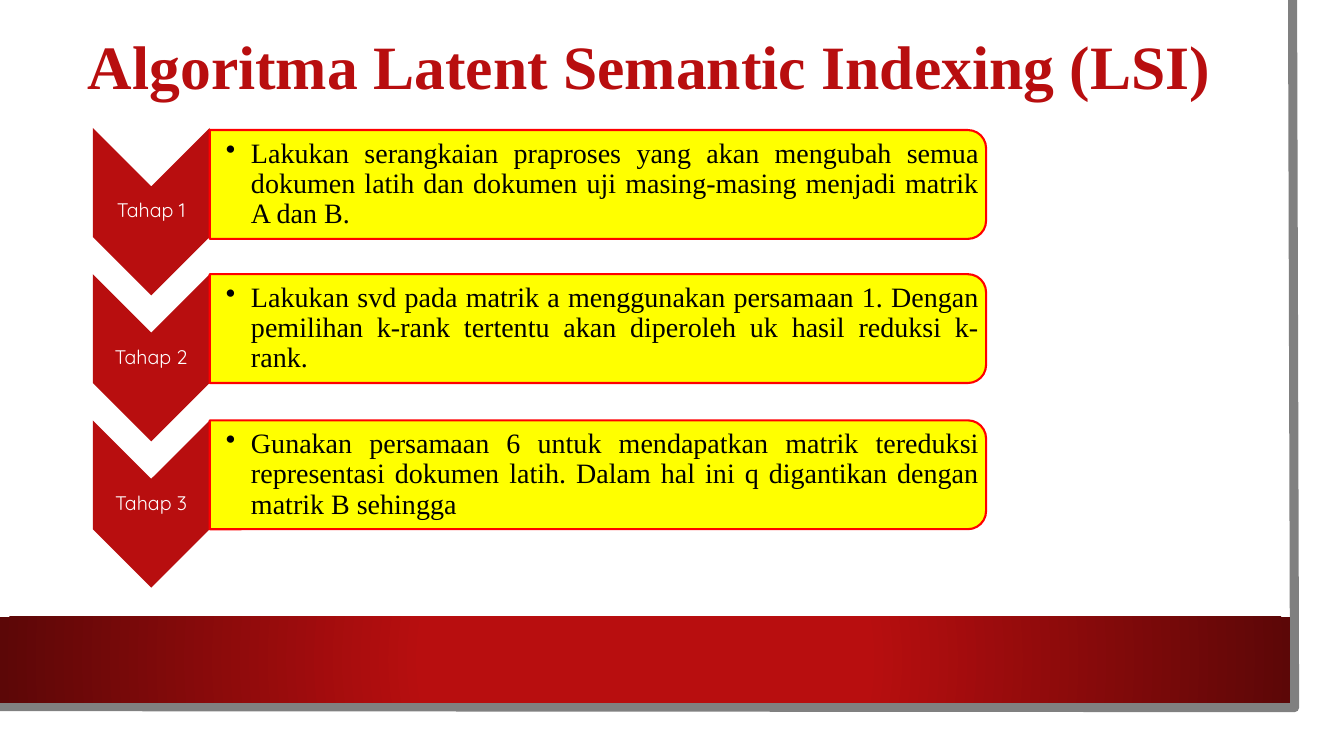
from dataclasses import dataclass

from lxml.etree import SubElement
from pptx import Presentation
from pptx.dml.color import RGBColor
from pptx.enum.shapes import MSO_SHAPE as Preset
from pptx.enum.text import MSO_ANCHOR as Anchor, MSO_AUTO_SIZE as AutoSize, PP_ALIGN as Align
from pptx.oxml.ns import qn
from pptx.util import Pt

PX = 9144  # 100 px to the inch


@dataclass(frozen=True)
class Theme:
    red: str = "B80E0F"
    dark_red: str = "5C0707"
    gray: str = "808080"
    yellow: str = "FFFF00"
    outline: str = "FF0000"
    black: str = "000000"
    white: str = "FFFFFF"
    serif: str = "Times New Roman"
    sans: str = "Quicksand"
    title_size: int = 44
    body_size: int = 20
    label_size: int = 14


def rgb(value):
    return RGBColor.from_string(value)


def apply_format(target, values):
    for name, value in values.items():
        setattr(target, name, value)


class SlideBuilder:
    def __init__(self, slide, theme):
        self.slide = slide
        self.theme = theme

    def fill_text(self, frame, text, font, paragraph_format, inset=(1, 1, 1, 1), bullet=False):
        left, top, right, bottom = (side * PX for side in inset)
        apply_format(frame, dict(
            word_wrap=True, auto_size=AutoSize.NONE, vertical_anchor=Anchor.MIDDLE,
            margin_left=left, margin_top=top, margin_right=right, margin_bottom=bottom))
        frame.text = text
        paragraph = frame.paragraphs[0]
        if bullet:
            properties = paragraph._p.get_or_add_pPr()
            properties.set("marL", str(25 * PX))
            properties.set("indent", str(-25 * PX))
        apply_format(paragraph, paragraph_format)
        if bullet:
            SubElement(properties, qn("a:buChar")).set("char", "•")
        name, size, color, bold = font
        run_font = paragraph.runs[0].font
        apply_format(run_font, dict(name=name, size=Pt(size), bold=bold))
        run_font.color.rgb = rgb(color)

    def title(self, text, box):
        title = self.slide.shapes.title
        apply_format(title, dict(zip(("left", "top", "width", "height"),
                                     (length * PX for length in box))))
        theme = self.theme
        self.fill_text(title.text_frame, text, (theme.serif, theme.title_size, theme.red, True),
                       dict(alignment=Align.CENTER), (0, 5, 0, 5))

    def text(self, box, *content, **options):
        shape = self.slide.shapes.add_textbox(*(length * PX for length in box))
        self.fill_text(shape.text_frame, *content, **options)

    def turned_shape(self, preset, box, fill, line=None):
        """Add a shape turned by 90 degrees that fills the given visible box."""
        left, top, width, height = box
        shift = (width - height) // 2
        shape = self.shape(preset, (left + shift, top - shift, height, width))
        shape.rotation = 90
        shape.fill.solid()
        shape.fill.fore_color.rgb = rgb(fill)
        if line:
            shape.line.color.rgb = rgb(line)
            shape.line.width = Pt(1.5)

    def shape(self, preset, box):
        shape = self.slide.shapes.add_shape(preset, *(length * PX for length in box))
        shape.shadow.inherit = False
        shape.line.fill.background()
        return shape

    def page_edge(self, points):
        builder = self.slide.shapes.build_freeform(*points[0], scale=PX)
        builder.add_line_segments(points[1:], close=False)
        edge = builder.convert_to_shape()
        edge.shadow.inherit = False
        edge.fill.background()
        edge.line.color.rgb = rgb(self.theme.gray)
        edge.line.width = Pt(6.5)

    def footer_band(self, box):
        band = self.shape(Preset.RECTANGLE, box)
        band.fill.gradient()
        stops = ((0.34, self.theme.red), (1, self.theme.dark_red))
        for stop, (position, color) in zip(band.fill.gradient_stops, stops):
            stop.position = position
            stop.color.rgb = rgb(color)
        # Radial gradient from the centre
        gradient = band._element.spPr.find(qn("a:gradFill"))
        gradient.remove(gradient.find(qn("a:lin")))
        radial = SubElement(gradient, qn("a:path"))
        radial.set("path", "circle")
        center = SubElement(radial, qn("a:fillToRect"))
        for side in "ltrb":
            center.set(side, "50000")

    def stage(self, label, description, arrow_top, bar_top):
        theme = self.theme
        self.turned_shape(Preset.CHEVRON, (92, arrow_top, 116, 166), theme.red)
        self.text((92, arrow_top + 58, 116, 50), label,
                  (theme.sans, theme.label_size, theme.white, False),
                  dict(alignment=Align.CENTER, line_spacing=0.9, space_after=Pt(5)))
        self.turned_shape(Preset.ROUND_2_SAME_RECTANGLE, (208, bar_top, 770, 108),
                          theme.yellow, theme.outline)
        self.text((208, bar_top + 5, 764, 98), description,
                  (theme.serif, theme.body_size, theme.black, False),
                  dict(alignment=Align.JUSTIFY, line_spacing=0.9, space_after=Pt(3)),
                  inset=(16, 1, 1, 1), bullet=True)


STAGES = (
    (129, "Lakukan serangkaian praproses yang akan mengubah semua dokumen latih "
          "dan dokumen uji masing-masing menjadi matrik A dan B."),
    (272, "Lakukan svd pada matrik a menggunakan persamaan 1. Dengan pemilihan "
          "k-rank tertentu akan diperoleh uk hasil reduksi k-rank."),
    (417, "Gunakan persamaan 6 untuk mendapatkan matrik tereduksi representasi "
          "dokumen latih. Dalam hal ini q digantikan dengan matrik B sehingga"),
)
FIRST_ARROW, STAGE_PITCH = 127, 145


def main():
    presentation = Presentation()
    presentation.slide_width, presentation.slide_height = 1333 * PX, 750 * PX
    slide = presentation.slides.add_slide(presentation.slide_layouts[5])
    builder = SlideBuilder(slide, Theme())

    # Page frame
    builder.page_edge(((1282, 0), (1284, 702), (0, 701)))
    builder.footer_band((0, 612, 1280, 85))

    # Title
    builder.title("Algoritma Latent Semantic Indexing (LSI)", (76, 21, 1137, 86))

    # Stages
    for index, (bar_top, description) in enumerate(STAGES):
        builder.stage(f"Tahap {index + 1}", description,
                      FIRST_ARROW + index * STAGE_PITCH, bar_top)

    presentation.save("out.pptx")


if __name__ == "__main__":
    main()
